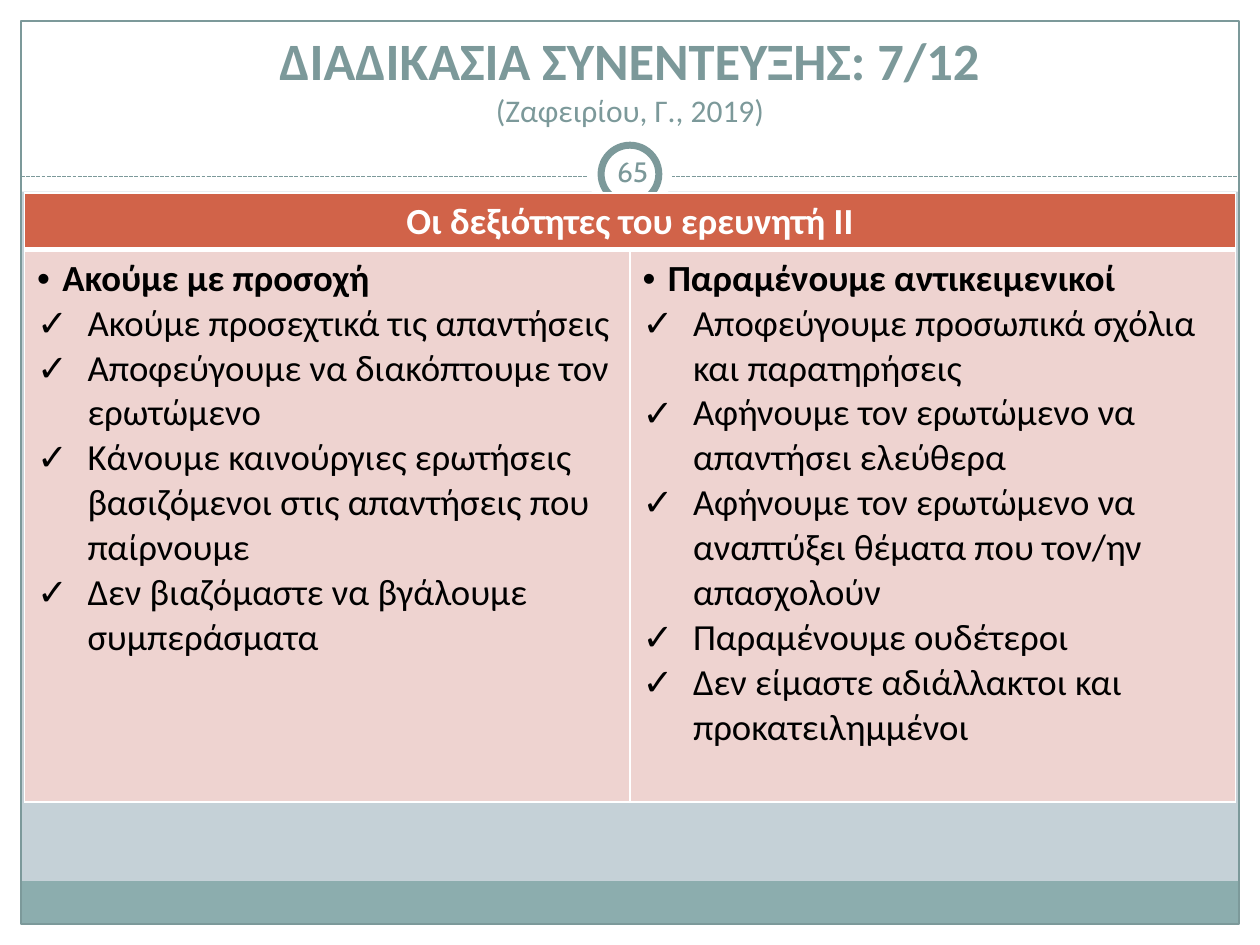
from typing import NamedTuple, Optional

from lxml import etree
from pptx import Presentation
from pptx.dml.color import RGBColor
from pptx.enum.dml import MSO_LINE
from pptx.enum.shapes import MSO_CONNECTOR, MSO_SHAPE
from pptx.enum.text import MSO_ANCHOR, PP_ALIGN
from pptx.oxml.ns import qn
from pptx.util import Pt

RECT, OVAL = MSO_SHAPE.RECTANGLE, MSO_SHAPE.OVAL
STRAIGHT, DASH = MSO_CONNECTOR.STRAIGHT, MSO_LINE.SQUARE_DOT
MIDDLE, BOTTOM = MSO_ANCHOR.MIDDLE, MSO_ANCHOR.BOTTOM
CENTER = PP_ALIGN.CENTER

WHITE = RGBColor(0xFF, 0xFF, 0xFF)
BLACK = RGBColor(0, 0, 0)
BACK = RGBColor(0xC5, 0xD1, 0xD7)
BAND = RGBColor(0x8C, 0xAD, 0xAE)
TEAL = RGBColor(0x7C, 0x99, 0x9A)
NUMBER = RGBColor(0x7B, 0x98, 0x99)
RUST = RGBColor(0xD1, 0x63, 0x49)
PINK = RGBColor(0xEE, 0xD3, 0xD0)

WIDE, HIGH, EDGE = 720, 540, 12
RULE_Y = 100.8
HEAD = "Οι δεξιότητες του ερευνητή ΙΙ"


class Shape(NamedTuple):
    kind: int
    left: float
    top: float
    width: float
    height: float
    fill: Optional[RGBColor] = WHITE
    line: float = 0


class Skill(NamedTuple):
    name: str
    steps: list[str]


SHAPES = [
    Shape(RECT, 0, HIGH - EDGE, WIDE, EDGE),
    Shape(RECT, 0, 0, WIDE, 109.5),
    Shape(RECT, 0, 0, EDGE, HIGH),
    Shape(RECT, WIDE - EDGE, 0, EDGE, HIGH),
    Shape(RECT, EDGE, 503.5, WIDE - 2 * EDGE, 24.5, BAND),
    Shape(RECT, EDGE, EDGE, WIDE - 2 * EDGE, HIGH - 2 * EDGE, None, 0.75),
]
RINGS = [
    Shape(OVAL, 336, 75.6, 48, 48),
    Shape(OVAL, 343.5, 83, 33, 33, WHITE, 4),
]
SKILLS = [
    Skill("Ακούμε με προσοχή", [
        "Ακούμε προσεχτικά τις απαντήσεις",
        "Αποφεύγουμε να διακόπτουμε τον ερωτώμενο",
        "Κάνουμε καινούργιες ερωτήσεις βασιζόμενοι στις απαντήσεις που παίρνουμε",
        "Δεν βιαζόμαστε να βγάλουμε συμπεράσματα",
    ]),
    Skill("Παραμένουμε αντικειμενικοί", [
        "Αποφεύγουμε προσωπικά σχόλια και παρατηρήσεις",
        "Αφήνουμε τον ερωτώμενο να απαντήσει ελεύθερα",
        "Αφήνουμε τον ερωτώμενο να αναπτύξει θέματα που τον/ην απασχολούν",
        "Παραμένουμε ουδέτεροι",
        "Δεν είμαστε αδιάλλακτοι και προκατειλημμένοι",
    ]),
]


def draw(slide, item: Shape) -> None:
    shape = slide.shapes.add_shape(
        item.kind, Pt(item.left), Pt(item.top), Pt(item.width), Pt(item.height))
    shape.shadow.inherit = False
    if item.fill is None:
        shape.fill.background()
    else:
        shape.fill.solid()
        shape.fill.fore_color.rgb = item.fill
    if item.line:
        shape.line.color.rgb = TEAL
        shape.line.width = Pt(item.line)
    else:
        shape.line.fill.background()


def draw_rule(slide) -> None:
    rule = slide.shapes.add_connector(
        STRAIGHT, Pt(EDGE), Pt(RULE_Y), Pt(WIDE - EDGE), Pt(RULE_Y))
    rule.line.color.rgb = TEAL
    rule.line.width = Pt(0.75)
    rule.line.dash_style = DASH
    etree.SubElement(rule._element.spPr, qn("a:effectLst"))


def add_run(para, text: str, size: float, color: RGBColor,
            bold: bool = False, face: str = "Calibri") -> None:
    run = para.add_run()
    run.text = text
    run.font.name, run.font.size, run.font.bold = face, Pt(size), bold
    run.font.color.rgb = color


def add_box(slide, left: float, top: float, width: float, height: float,
            anchor: int, inset: float):
    """Add a centred text box and return its first paragraph."""
    box = slide.shapes.add_textbox(Pt(left), Pt(top), Pt(width), Pt(height))
    frame = box.text_frame
    frame.word_wrap = True
    frame.vertical_anchor = anchor
    frame.margin_left = frame.margin_right = Pt(inset)
    frame.margin_top = frame.margin_bottom = Pt(3.6)
    para = frame.paragraphs[0]
    para.alignment = CENTER
    return para


def add_bullet(para, mark: str, indent: float) -> None:
    props = para._p.get_or_add_pPr()
    props.set("marL", str(Pt(indent)))
    props.set("indent", str(-Pt(indent)))
    etree.SubElement(props, qn("a:buFont"), typeface="Arial")
    etree.SubElement(props, qn("a:buChar"), char=mark)


def style_cell(cell, color: RGBColor, top: float, bottom: float) -> None:
    """Set white borders of the given widths, then the fill."""
    props = cell._tc.get_or_add_tcPr()
    for side, width in (("L", 1), ("R", 1), ("T", top), ("B", bottom)):
        line = etree.SubElement(props, qn(f"a:ln{side}"), w=str(Pt(width)))
        fill = etree.SubElement(line, qn("a:solidFill"))
        etree.SubElement(fill, qn("a:srgbClr"), val=str(WHITE))
    cell.fill.solid()
    cell.fill.fore_color.rgb = color


def fill_skill(cell, skill: Skill) -> None:
    frame = cell.text_frame
    para = frame.paragraphs[0]
    add_bullet(para, "•", 14.4)
    add_run(para, skill.name, 21, BLACK, True)
    for step in skill.steps:
        para = frame.add_paragraph()
        add_bullet(para, "✓", 28.8)
        add_run(para, step, 21, BLACK)


def draw_table(slide) -> None:
    table = slide.shapes.add_table(
        2, len(SKILLS), Pt(14), Pt(110.25), Pt(692), Pt(348)).table
    table.horz_banding = False
    table.rows[0].height, table.rows[1].height = Pt(32.5), Pt(315.5)
    for col, skill in enumerate(SKILLS):
        table.columns[col].width = Pt(346)
        style_cell(table.cell(0, col), RUST, 1, 3)
        body = table.cell(1, col)
        style_cell(body, PINK, 3, 1)
        fill_skill(body, skill)
    head = table.cell(0, 0)
    head.merge(table.cell(0, len(SKILLS) - 1))
    para = head.text_frame.paragraphs[0]
    para.alignment = CENTER
    add_run(para, HEAD, 21, WHITE, True)


def main() -> None:
    deck = Presentation()
    deck.slide_width, deck.slide_height = Pt(WIDE), Pt(HIGH)
    slide = deck.slides.add_slide(deck.slide_layouts[6])
    slide.background.fill.solid()
    slide.background.fill.fore_color.rgb = BACK
    for item in SHAPES:
        draw(slide, item)
    draw_rule(slide)
    for ring in RINGS:
        draw(slide, ring)
    page = add_box(slide, 343.5, 80.6, 36, 34.6, MIDDLE, 3.6)
    add_run(page, "65", 16, NUMBER, face="Cabin")
    title = add_box(slide, 24, 18, 672, 59, BOTTOM, 7.2)
    add_run(title, "ΔΙΑΔΙΚΑΣΙΑ ΣΥΝΕΝΤΕΥΞΗΣ: 7/12", 30, TEAL, True)
    title.add_line_break()
    add_run(title, "(Ζαφειρίου, Γ., 2019)", 18, TEAL)
    draw_table(slide)
    deck.save("out.pptx")


if __name__ == "__main__":
    main()
